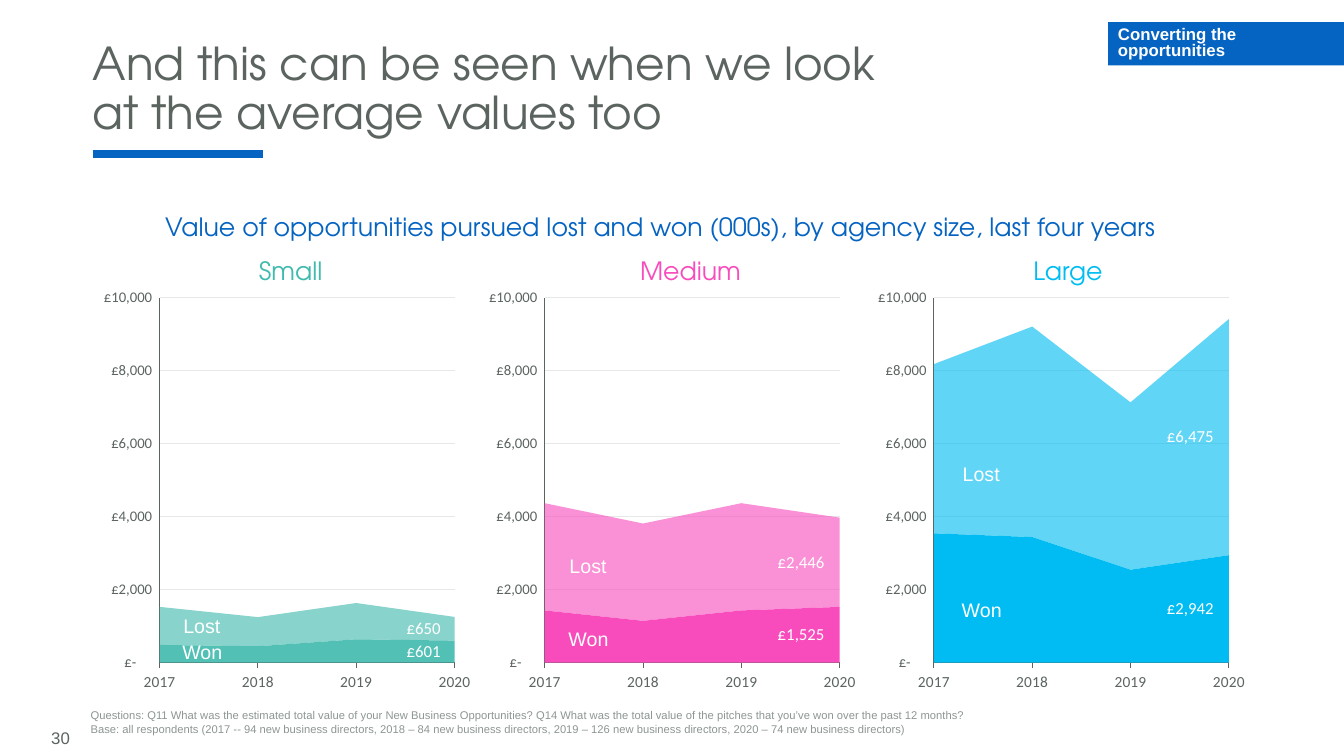
"""Build a slide of lost and won opportunity values by agency size."""
from lxml import etree
from pptx import Presentation
from pptx.chart.data import CategoryChartData
from pptx.dml.color import RGBColor
from pptx.enum.chart import XL_CHART_TYPE, XL_TICK_MARK
from pptx.enum.shapes import MSO_CONNECTOR, MSO_SHAPE
from pptx.enum.text import MSO_ANCHOR, PP_ALIGN
from pptx.oxml import parse_xml
from pptx.oxml.ns import nsdecls, qn
from pptx.util import Inches, Pt

INK = {"blue": "0563C1", "text": "5B645F", "note": "8D9691", "white": "FFFFFF",
       "grid": "E6E8E7", "small": "40BAAE", "medium": "F84CBC", "large": "00BCF2"}
HEAD = "TeX Gyre Adventor"
MONEY = '_-"£"* #,##0_-;\\-"£"* #,##0_-;_-"£"* "-"??_-;_-@_-'


def style(font, size, ink, face, bold=False):
    looks = {"size": Pt(size), "name": face, "bold": bold}
    for key, val in looks.items():
        setattr(font, key, val)
    font.color.rgb = RGBColor.from_string(INK[ink])


def write(at, text, size, ink, face="Arial", wrap=False):
    box = slide.shapes.add_textbox(*map(Inches, at))
    frame = box.text_frame
    frame.word_wrap = wrap
    frame.text = text
    for para in frame.paragraphs:
        style(para.font, size, ink, face)
    return frame


deck = Presentation()
deck.slide_width, deck.slide_height = Inches(13.33), Inches(7.5)
slide = deck.slides.add_slide(deck.slide_layouts[6])

rule = slide.shapes.add_connector(MSO_CONNECTOR.STRAIGHT, Inches(0.92), Inches(1.53),
                                  Inches(2.61), Inches(1.53))
rule.line.width = Pt(6)
rule.line.color.rgb = RGBColor.from_string(INK["blue"])
etree.SubElement(rule._element.spPr, qn("a:effectLst"))

title = write((0.92, 0.4, 8.11, 1.03),
              "And this can be seen when we look at the average values too",
              32.4, "text", HEAD, True)
title.vertical_anchor = MSO_ANCHOR.BOTTOM
title.margin_left = title.margin_right = 0
title.paragraphs[0].line_spacing = 0.9

tag = slide.shapes.add_shape(MSO_SHAPE.RECTANGLE, Inches(10.99), Inches(0.22),
                             Inches(2.34), Inches(0.43))
tag.shadow.inherit = False
tag.fill.solid()
tag.fill.fore_color.rgb = RGBColor.from_string(INK["blue"])
tag.line.fill.background()
tag.text_frame.text = "Converting the opportunities"
tag.text_frame.word_wrap = True
tag.text_frame.vertical_anchor = MSO_ANCHOR.MIDDLE
label = tag.text_frame.paragraphs[0]
label.alignment, label.line_spacing = PP_ALIGN.LEFT, 0.8
style(label.font, 12, "white", "Arial", True)

write((0.8, 6.98, 8.94, 0.37),
      "Questions: Q11 What was the estimated total value of your New Business Opportunities? "
      "Q14 What was the total value of the pitches that you’ve won over the past 12 months?\n"
      "Base: all respondents (2017 -- 94 new business directors, 2018 – 84 new business directors, "
      "2019 – 126 new business directors, 2020 – 74 new business directors)",
      8, "note", wrap=True)

PLOT = {"xMode": "edge", "yMode": "edge", "x": 0.173, "y": 0.042, "w": 0.764, "h": 0.87}
LEADER = (f'<c:extLst {nsdecls("c")}><c:ext uri="{{CE6537A1-D6FC-4f65-9D91-7224C49458BB}}" '
          'xmlns:c15="http://schemas.microsoft.com/office/drawing/2012/chart">'
          '<c15:showLeaderLines val="0"/></c:ext></c:extLst>')
SIZES = [
    ("small", 0.92, (2.47, 0.86), -0.08,
     [("Won", [483, 447, 637, 601], 90, (1.71, 6.3)),
      ("Lost", [1043, 798, 994, 650], 62, (1.72, 6.04))]),
    ("medium", 4.74, (6.25, 1.21), -0.1,
     [("Won", [1428, 1143, 1428, 1525], 100, (5.54, 6.17)),
      ("Lost", [2939, 2667, 2939, 2446], 62, (5.55, 5.45))]),
    ("large", 8.6, (10.15, 0.89), -0.1,
     [("Won", [3542, 3439, 2544, 2942], 100, (9.44, 5.88)),
      ("Lost", [4640, 5772, 4590, 6475], 62, (9.45, 4.53))]),
]

for size, left, (head, wide), shift, parts in SIZES:
    data = CategoryChartData(number_format='"£"#,##0')
    data.categories = ["2017", "2018", "2019", "2020"]
    for name, vals, *_ in parts:
        data.add_series(name, vals)
    chart = slide.shapes.add_chart(XL_CHART_TYPE.AREA_STACKED, Inches(left), Inches(2.78),
                                   Inches(3.83), Inches(4.16), data).chart
    chart.has_legend = chart.has_title = False
    style(chart.font, 10, "text", "Calibri")

    values, years = chart.value_axis, chart.category_axis
    scale = {"minimum_scale": 0, "maximum_scale": 10000, "major_unit": 2000,
             "has_major_gridlines": True, "major_tick_mark": XL_TICK_MARK.NONE}
    for key, val in scale.items():
        setattr(values, key, val)
    years.major_tick_mark = XL_TICK_MARK.OUTSIDE
    years.has_major_gridlines = False
    values.tick_labels.number_format = MONEY
    values.tick_labels.number_format_is_linked = False
    values._element.find(qn("c:crossBetween")).set("val", "midCat")
    for axis, points in ((values, 10.5), (years, 11)):
        style(axis.tick_labels.font, points, "text", "Calibri")
    for line, ink in ((values.format.line, "text"), (years.format.line, "text"),
                      (values.major_gridlines.format.line, "grid")):
        line.width = Pt(0.75)
        line.color.rgb = RGBColor.from_string(INK[ink])

    area = chart._chartSpace.chart.plotArea
    for old in area.findall(qn("c:layout")):
        area.remove(old)
    frame = "".join(f'<c:{key} val="{val}"/>' for key, val in PLOT.items())
    area.insert(0, parse_xml(f'<c:layout {nsdecls("c")}><c:manualLayout>'
                             f'<c:layoutTarget val="inner"/>{frame}'
                             '</c:manualLayout></c:layout>'))

    for series, (name, vals, alpha, spot) in zip(chart.plots[0].series, parts):
        fill = series.format.fill
        fill.solid()
        fill.fore_color.rgb = RGBColor.from_string(INK[size])
        tint = series._element.spPr.find(".//" + qn("a:srgbClr"))
        etree.SubElement(tint, qn("a:alpha")).set("val", str(alpha * 1000))
        series.data_labels.show_value = False
        style(series.points[3].data_label.font, 12, "white", "Calibri")
        marks = series._element.find(qn("c:dLbls"))
        for lead in marks.findall(qn("c:showLeaderLines")):
            lead.set("val", "0")
        marks.append(parse_xml(LEADER))
        marks.find(qn("c:dLbl")).insert(1, parse_xml(
            f'<c:layout {nsdecls("c")}><c:manualLayout><c:x val="{shift}"/>'
            '<c:y val="0"/></c:manualLayout></c:layout>'))
        write((*spot, 0.6 if name == "Won" else 0.57, 0.34), name, 14, "white")
    write((head, 2.48, wide, 0.4), size.title(), 18, size, HEAD)

write((1.54, 2.05, 10.09, 0.4),
      "Value of opportunities pursued lost and won (000s), by agency size, last four years",
      18, "blue", HEAD)
write((0.41, 7.12, 4.5, 0.4), "30", 12, "text", wrap=True).vertical_anchor = MSO_ANCHOR.MIDDLE

deck.save("out.pptx")
